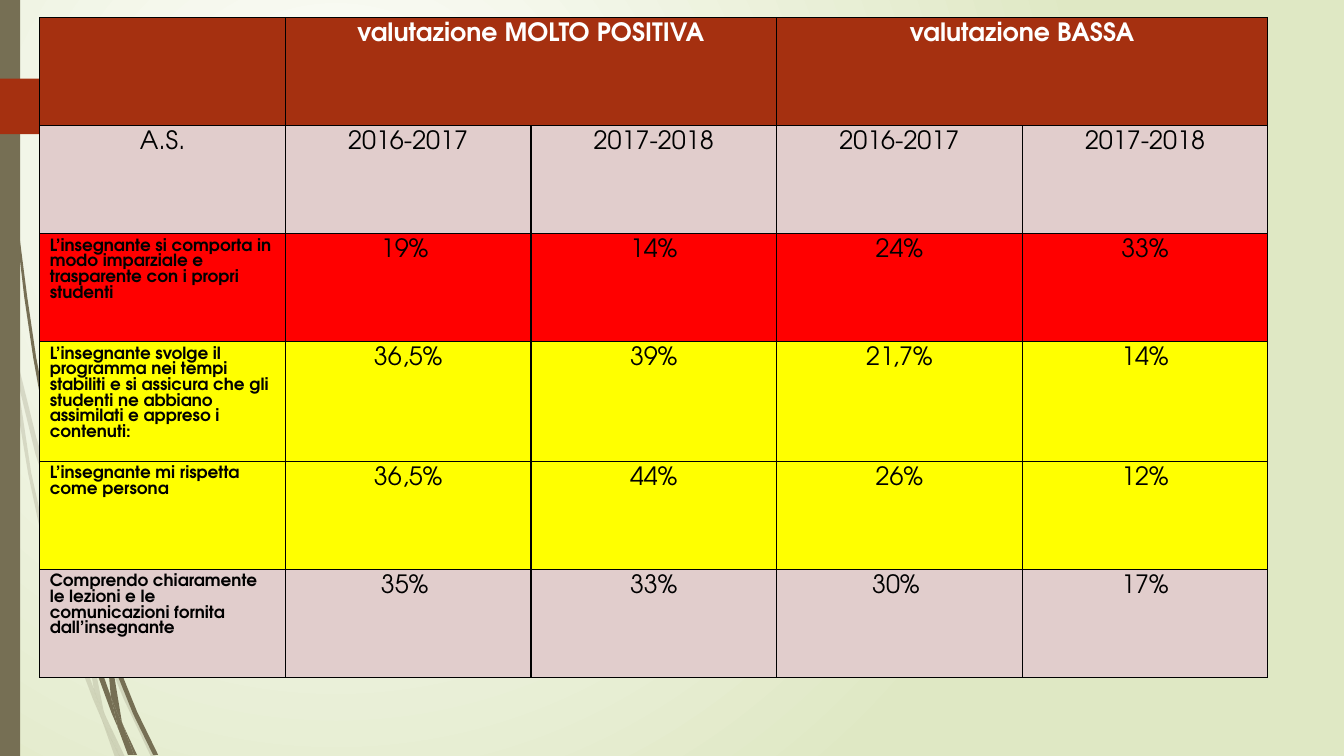
"""Builds the slide comparing very positive and low teacher ratings by school year."""
from lxml.etree import SubElement
from pptx import Presentation
from pptx.dml.color import RGBColor
from pptx.enum.shapes import MSO_SHAPE
from pptx.enum.text import PP_ALIGN
from pptx.oxml import parse_xml
from pptx.oxml.ns import nsdecls, qn
from pptx.util import Cm, Pt

BROWN, RUST, PINK, RED, YELLOW = "766F54", "A53010", "E1CDCC", "FF0000", "FFFF00"
LIGHT_WISPS = [
    [(11, 350), (9, 322), (0, 282), (0, 299), (10, 344)],
    [(58, 522), (84, 599), (85, 586), (62, 520), (36, 434), (14, 345), (17, 376), (35, 450)],
    [(92, 607), (88, 596), (88, 610), (123, 694), (150, 751), (155, 751), (127, 692)],
    [(119, 751), (124, 751), (105, 711)],
    [(93, 683), (70, 619), (48, 545), (31, 469), (17, 376), (11, 350), (18, 410), (28, 470),
     (44, 546), (65, 621), (92, 693), (101, 714), (99, 707)],
    [(84, 599), (87, 646), (93, 683), (96, 692), (105, 711), (103, 706), (91, 646),
     (88, 610), (88, 608)],
    [(88, 584), (95, 522), (110, 462), (132, 404), (160, 349), (192, 296), (229, 245),
     (268, 198), (290, 175), (312, 154), (312, 153), (289, 175), (268, 197), (228, 244),
     (190, 295), (158, 348), (130, 403), (107, 461), (92, 522), (85, 584), (85, 586), (88, 596)],
    [(101, 714), (114, 751), (119, 751)],
    [(88, 608), (88, 610), (88, 596), (85, 586), (84, 599)],
    [(96, 692), (93, 683), (99, 707), (101, 714), (119, 751), (105, 711)],
]
DARK_WISPS = [
    [(7, 110), (11, 172), (17, 233), (24, 294), (33, 355), (44, 416), (56, 477), (57, 481),
     (55, 457), (55, 453), (36, 355), (27, 294), (19, 232), (13, 171), (8, 109), (5, 48),
     (4, 0), (3, 0), (4, 48)],
    [(88, 592), (106, 645), (106, 631), (93, 590), (75, 532), (60, 472), (64, 505), (75, 549)],
    [(113, 649), (110, 641), (111, 656), (132, 708), (152, 749), (157, 749), (136, 706)],
    [(110, 691), (98, 657), (84, 607), (72, 556), (64, 505), (57, 477), (68, 557), (79, 608),
     (93, 659), (111, 708), (117, 722), (116, 717)],
    [(60, 472), (58, 453), (55, 401), (54, 349), (55, 297), (58, 245), (63, 193), (70, 141),
     (62, 193), (56, 245), (53, 297), (52, 349), (52, 399), (55, 449)],
    [(133, 749), (136, 749), (122, 719)],
    [(57, 477), (64, 505), (60, 472), (55, 449), (55, 453)],
    [(111, 633), (115, 592), (125, 552), (140, 514), (158, 476), (180, 440), (205, 406),
     (231, 374), (245, 359), (261, 344), (260, 344), (245, 358), (231, 373), (204, 405),
     (178, 439), (156, 474), (137, 512), (122, 551), (111, 590), (106, 631), (110, 641)],
    [(117, 722), (127, 749), (131, 749)],
    [(106, 645), (110, 691), (116, 706), (122, 719), (121, 716), (111, 656), (109, 651)],
    [(106, 645), (109, 651), (111, 656), (110, 641), (106, 631)],
    [(116, 706), (110, 691), (116, 717), (117, 722), (130, 749), (133, 749), (122, 719)],
]
ROWS = [
    (RUST, ["", "valutazione MOLTO POSITIVA", "", "valutazione BASSA", ""]),
    (PINK, ["A.S.", "2016-2017", "2017-2018", "2016-2017", "2017-2018"]),
    (RED, ["L’insegnante si comporta in modo imparziale e trasparente con i propri studenti",
           "19% ", "14%", "24%", "33%"]),
    (YELLOW, ["L’insegnante svolge il programma nei tempi stabiliti e si assicura che gli "
              "studenti ne abbiano assimilati e appreso i contenuti:",
              "36,5%", "39%", "21,7%", "14%"]),
    (YELLOW, ["L’insegnante mi rispetta come persona", "36,5%", "44%", "26%", "12%"]),
    (PINK, ["Comprendo chiaramente le lezioni e le comunicazioni fornita dall’insegnante",
            "35% ", "33%", "30% ", "17%"]),
]
HEADER = {"size": Pt(18), "bold": True, "color": "FFFFFF"}
QUESTION = {"size": Pt(12), "bold": True, "color": "000000"}
VALUE = {"size": Pt(18), "bold": False, "color": "000000"}


def rgb(color):
    return RGBColor.from_string(color)


def paint(sp, color):
    sp.shadow.inherit = False
    sp.fill.solid()
    sp.fill.fore_color.rgb = rgb(color)
    sp.line.fill.background()


prs = Presentation()
prs.slide_width, prs.slide_height = Cm(33.87), Cm(19.05)
s = prs.slides.add_slide(prs.slide_layouts[6])

fill = s.background.fill
fill.gradient()
for stop, color in zip(fill.gradient_stops, ("FFFFFF", "DFE8C4")):
    stop.color.rgb = rgb(color)
lin = s.element.find(".//" + qn("a:lin"))
lin.getparent().replace(lin, parse_xml(
    f'<a:path {nsdecls("a")} path="circle">'
    '<a:fillToRect l="50000" t="50000" r="100000" b="100000"/></a:path>'))

for wisps, alpha in ((LIGHT_WISPS, 20000), (DARK_WISPS, 100000)):
    grp = s.shapes.add_group_shape()
    for pts in wisps:
        fb = grp.shapes.build_freeform(*pts[0], scale=Cm(0.0254))
        fb.add_line_segments(pts[1:], close=True)
        sp = fb.convert_to_shape()
        paint(sp, BROWN)
        clr = sp.element.spPr.find(".//" + qn("a:srgbClr"))
        SubElement(clr, qn("a:alpha"), val=str(alpha))

bar = s.shapes.add_shape(MSO_SHAPE.RECTANGLE, 0, 0, Cm(0.51), Cm(19.05))
paint(bar, BROWN)
tab = s.shapes.add_shape(MSO_SHAPE.PENTAGON, 0, Cm(1.98), Cm(4.42), Cm(1.4))
paint(tab, RUST)

tbl = s.shapes.add_table(6, 5, Cm(1), Cm(0.45), Cm(30.95), Cm(16.62)).table
tbl.horz_banding = False
for col in tbl.columns:
    col.width = Cm(6.19)
for i, (color, texts) in enumerate(ROWS):
    tbl.rows[i].height = Cm(3.02 if i == 3 else 2.72)
    for j, text in enumerate(texts):
        cell = tbl.cell(i, j)
        tcPr = cell._tc.get_or_add_tcPr()
        for side in ("lnL", "lnR", "lnT", "lnB"):
            ln = SubElement(tcPr, qn("a:" + side), w=str(Pt(1)))
            SubElement(SubElement(ln, qn("a:solidFill")), qn("a:srgbClr"), val="000000")
        cell.fill.solid()
        cell.fill.fore_color.rgb = rgb(color)
        if not text:
            continue
        question = j == 0 and i > 1
        fmt = HEADER if i == 0 else QUESTION if question else VALUE
        p = cell.text_frame.paragraphs[0]
        p.alignment = PP_ALIGN.LEFT if question else PP_ALIGN.CENTER
        r = p.add_run()
        r.text = text
        r.font.name = "TeX Gyre Adventor"
        r.font.color.rgb = rgb(fmt["color"])
        for name in ("size", "bold"):
            setattr(r.font, name, fmt[name])
for j in (1, 3):
    tbl.cell(0, j).merge(tbl.cell(0, j + 1))

prs.save("out.pptx")
